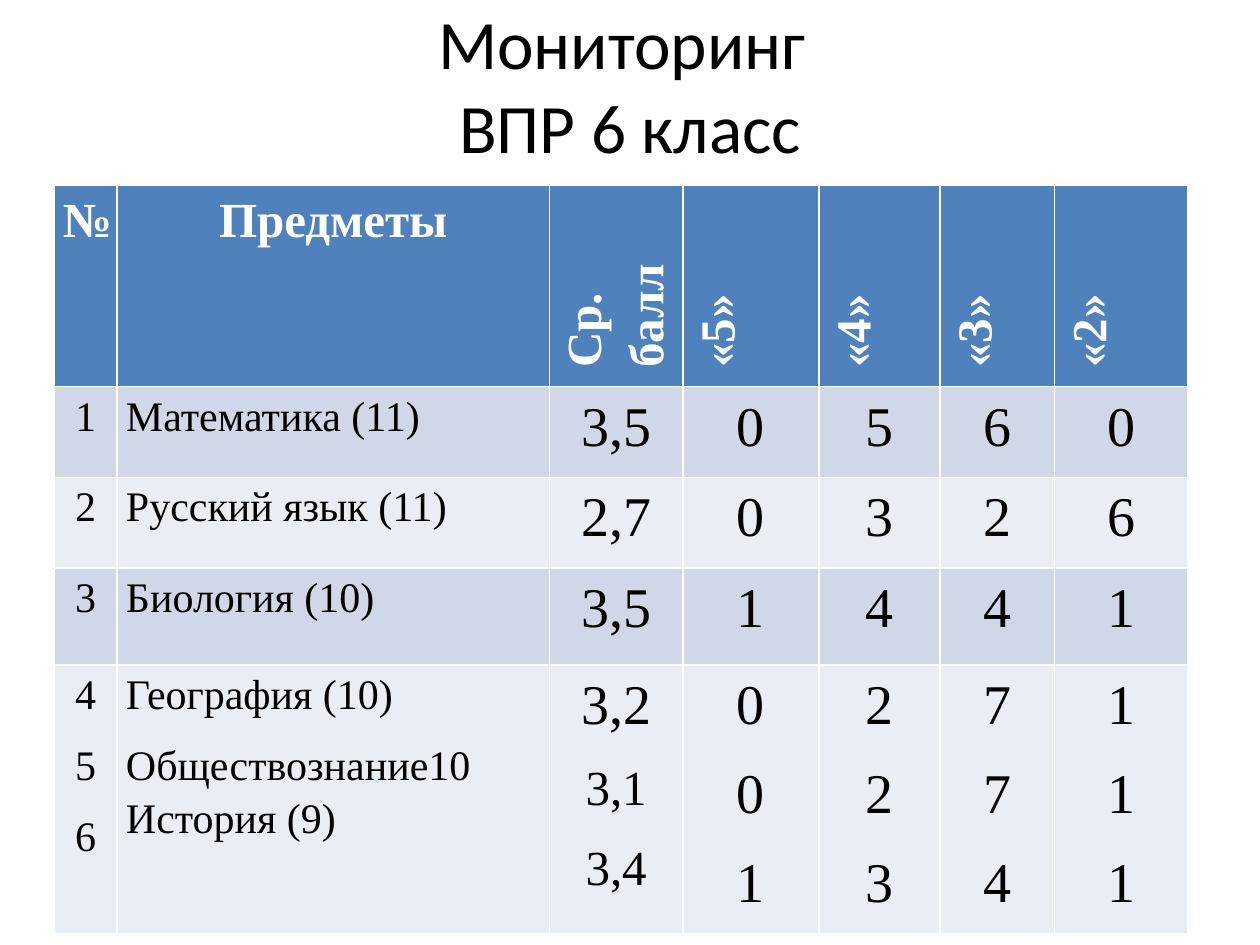
"""Build a slide with a table of sixth-grade test results by subject."""
from pptx import Presentation
from pptx import util as u
from pptx.dml.color import RGBColor
from pptx.enum import text

COLORS = {"header": "4F81BD", "odd": "D0D8E8", "even": "E9EDF4",
          "light": "FFFFFF", "dark": "000000"}
COLUMN_WIDTHS = [0.5, 3.43, 1.06, 1.08, 0.96, 0.91, 1.06]
ROW_HEIGHTS = [1.46, 0.72, 0.72, 0.77, 2.13]
COLUMN_SIZES = [24, 24, 32, 32, 32, 32, 32]
HEADER_SIZE = SMALL_SCORE_SIZE = 28
FIRST_VERTICAL_COLUMN = 2
ROWS = [
    ["№", "Предметы", "Ср. балл", "«5»", "«4»", "«3»", "«2»"],
    ["1", "Математика (11)", "3,5", "0", "5", "6", "0"],
    ["2", "Русский язык (11)", "2,7", "0", "3", "2", "6"],
    ["3", "Биология (10)", "3,5", "1", "4", "4", "1"],
    ["4\n5\n6", "География (10)\nОбществознание10 История (9)", "3,2\n3,1\n3,4",
     "0\n0\n1", "2\n2\n3", "7\n7\n4", "1\n1\n1"],
]


def add_run(paragraph, words, font_name, size, color, bold=False):
    run = paragraph.add_run()
    run.text = words
    run.font.name = font_name
    run.font.size = u.Pt(size)
    run.font.bold = bold
    run.font.color.rgb = RGBColor.from_string(COLORS[color])


presentation = Presentation()
presentation.slide_width = u.Inches(10)
presentation.slide_height = u.Inches(7.5)
slide = presentation.slides.add_slide(presentation.slide_layouts[5])

title = slide.shapes.title
title.left, title.top = u.Inches(0.5), u.Inches(0.14)
title.width, title.height = u.Inches(9), u.Inches(1.05)
title.text_frame.vertical_anchor = text.MSO_ANCHOR.MIDDLE
heading = title.text_frame.paragraphs[0]
heading.alignment = text.PP_ALIGN.CENTER
add_run(heading, "Мониторинг ", "Calibri", 39.6, "dark")
heading.add_line_break()
add_run(heading, "ВПР 6 класс", "Calibri", 39.6, "dark")

table = slide.shapes.add_table(
    len(ROWS), len(COLUMN_WIDTHS), u.Inches(0.43), u.Inches(1.47),
    u.Inches(sum(COLUMN_WIDTHS)), u.Inches(sum(ROW_HEIGHTS))).table
for column, width in zip(table.columns, COLUMN_WIDTHS):
    column.width = u.Inches(width)
for row, height in zip(table.rows, ROW_HEIGHTS):
    row.height = u.Inches(height)

for row_index, row in enumerate(ROWS):
    is_header = row_index == 0
    band = "header" if is_header else ("even", "odd")[row_index % 2]
    for column_index, content in enumerate(row):
        is_vertical = is_header and column_index >= FIRST_VERTICAL_COLUMN
        is_subject = not is_header and column_index == 1
        cell = table.cell(row_index, column_index)
        cell.fill.solid()
        cell.fill.fore_color.rgb = RGBColor.from_string(COLORS[band])
        cell.margin_left = cell.margin_right = u.Inches(0.07)
        cell.margin_top = cell.margin_bottom = 0
        if is_vertical:
            cell._tc.get_or_add_tcPr().set("vert", "vert270")
        for line_index, line in enumerate(content.split("\n")):
            frame = cell.text_frame
            paragraph = frame.add_paragraph() if line_index else frame.paragraphs[0]
            paragraph.line_spacing = 1.15
            paragraph.space_after = u.Pt(0 if is_header else 10)
            if is_vertical:
                paragraph._p.get_or_add_pPr().set("marL", str(u.Inches(0.08)))
            elif not is_subject:
                paragraph.alignment = text.PP_ALIGN.CENTER
            size = HEADER_SIZE if is_header else COLUMN_SIZES[column_index]
            if column_index == 2 and line_index:
                size = SMALL_SCORE_SIZE
            add_run(paragraph, line, "Times New Roman", size,
                    "light" if is_header else "dark", is_header)

presentation.save("out.pptx")
